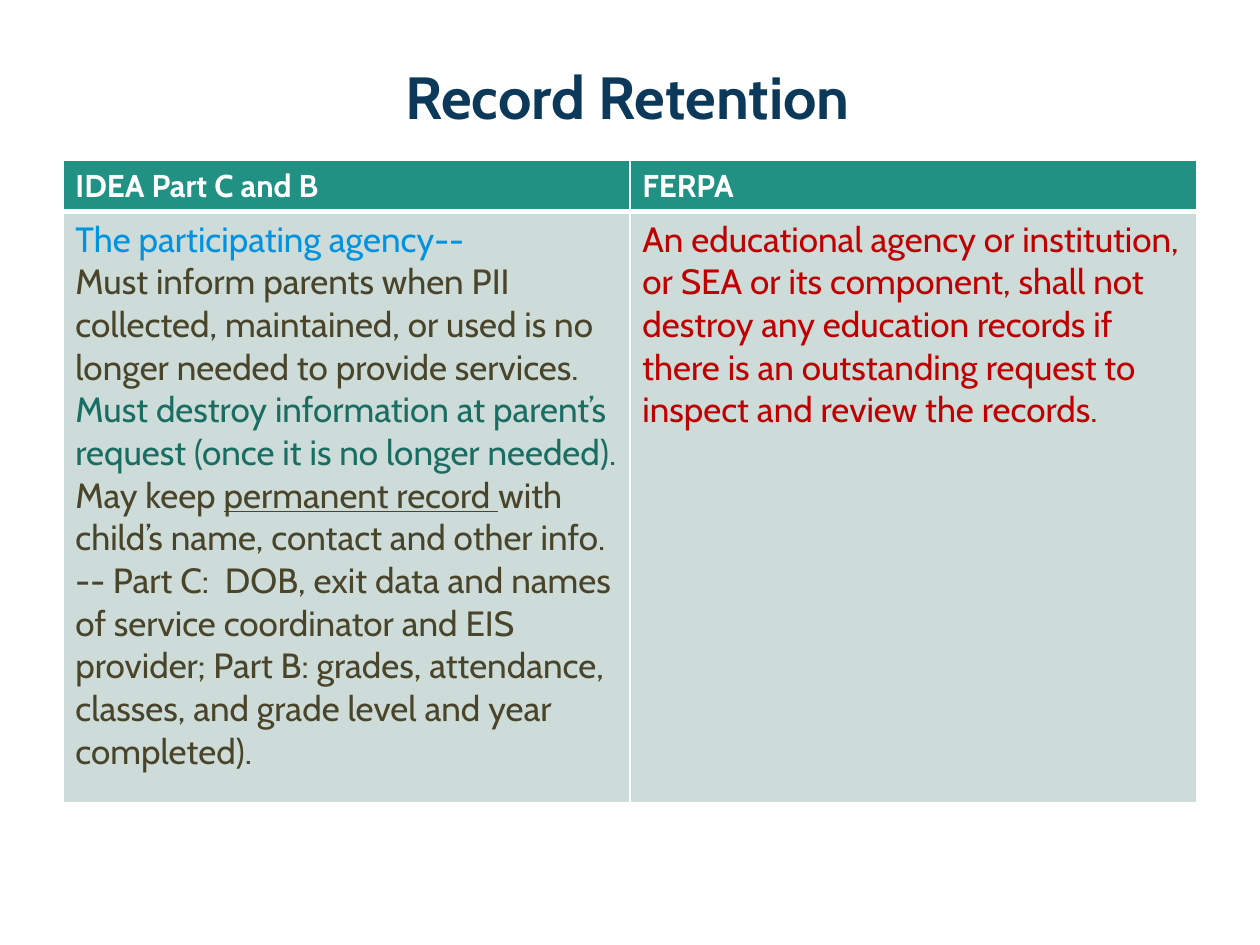
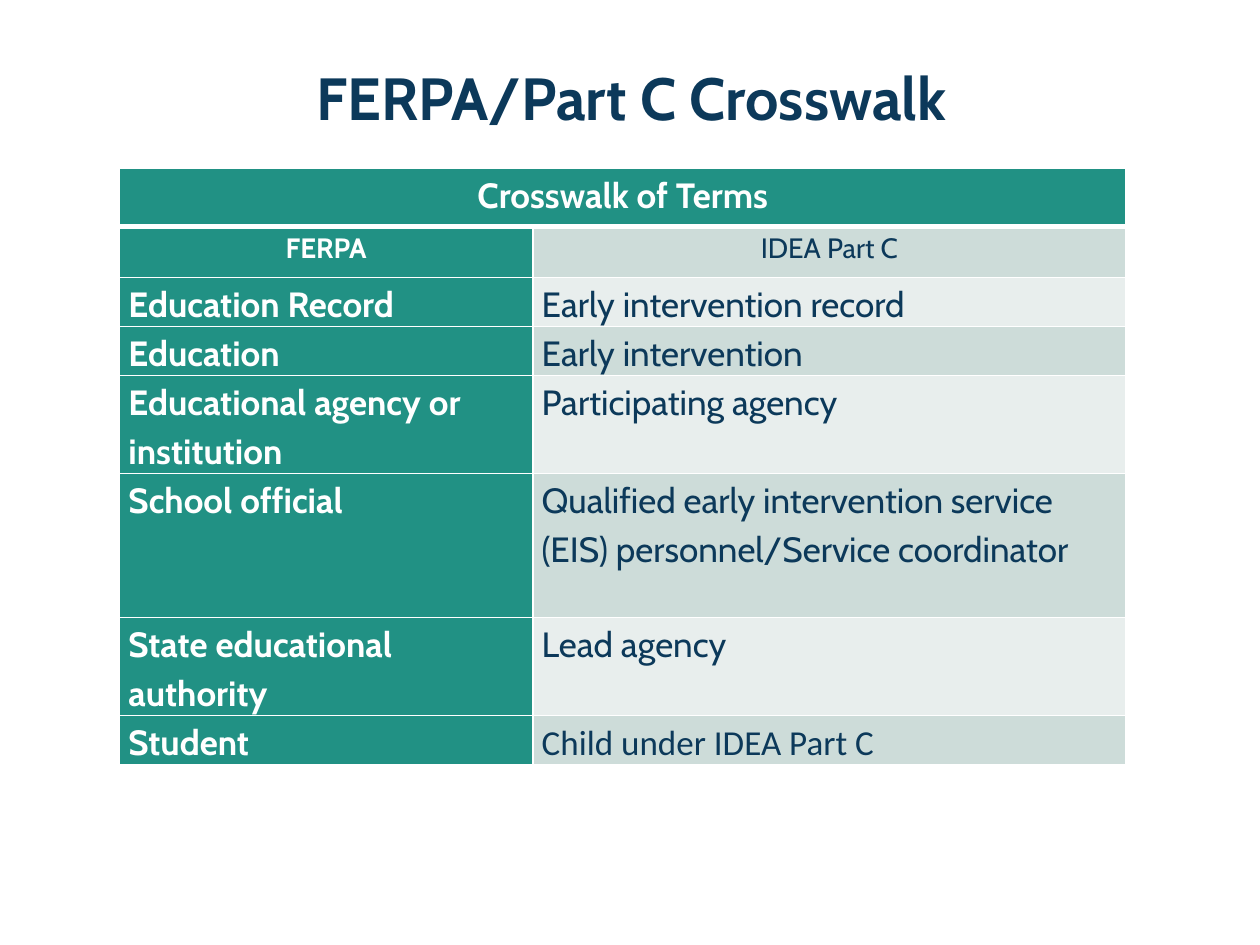
from dataclasses import dataclass

from lxml import etree
from pptx import Presentation
from pptx.dml.color import RGBColor
from pptx.enum.text import MSO_ANCHOR, MSO_AUTO_SIZE, PP_ALIGN
from pptx.oxml.ns import qn
from pptx.util import Cm, Pt

CENTER = PP_ALIGN.CENTER
LEFT = PP_ALIGN.LEFT
BOTTOM = MSO_ANCHOR.BOTTOM
TOP = MSO_ANCHOR.TOP
NO_FIT = MSO_AUTO_SIZE.NONE
TITLE_ONLY = 5


@dataclass(frozen=True)
class Theme:
    font: str = "Cabin"
    plain_font: str = "Calibri"
    navy: str = "0C395A"
    teal: str = "219184"
    deep_teal: str = "196D63"
    band: str = "CDDCD9"
    pale_band: str = "E8EEED"
    white: str = "FFFFFF"
    blue: str = "0293E0"
    olive: str = "4A452A"
    red: str = "C00000"
    title_size: int = 34
    body_size: int = 20
    heading_size: int = 18
    column_size: int = 16
    thin_line: int = 1
    thick_line: int = 3


THEME = Theme()


def write(para, text, *, size=THEME.body_size, color=THEME.navy,
          font=THEME.font, bold=False, underline=False):
    span = para.add_run()
    span.text = text
    span.font.name = font
    span.font.size = Pt(size)
    span.font.bold = bold
    span.font.underline = underline
    span.font.color.rgb = RGBColor.from_string(color)


class Builder:
    def __init__(self, theme):
        self.theme = theme
        self.deck = Presentation()
        self.deck.slide_width = Cm(25.4)
        self.deck.slide_height = Cm(19.05)
        self.page = None

    def start_page(self, title, left, top):
        self.page = self.deck.slides.add_slide(self.deck.slide_layouts[TITLE_ONLY])
        box = self.page.shapes.title
        box.left, box.top, box.width, box.height = Cm(left), Cm(top), Cm(22.86), Cm(3.1)
        frame = box.text_frame
        frame.auto_size = NO_FIT
        frame.word_wrap = True
        frame.vertical_anchor = BOTTOM
        para = frame.paragraphs[0]
        para.alignment = CENTER
        write(para, title, size=self.theme.title_size, bold=True)

    def table(self, left, top, widths, heights):
        table = self.page.shapes.add_table(
            len(heights), len(widths), Cm(left), Cm(top),
            Cm(sum(widths)), Cm(sum(heights))).table
        table.horz_banding = False
        for column, width in zip(table.columns, widths):
            column.width = Cm(width)
        for row, height in zip(table.rows, heights):
            row.height = Cm(height)
        return table

    def cell(self, table, row, column, paragraphs, fill, *, align=LEFT,
             side=0.25, edge=0.13, spacing=None, after=0):
        cell = table.cell(row, column)
        cell.margin_left = cell.margin_right = Cm(side)
        cell.margin_top = cell.margin_bottom = Cm(edge)
        cell.vertical_anchor = TOP
        cell.fill.solid()
        cell.fill.fore_color.rgb = RGBColor.from_string(fill)
        self.borders(cell, row)
        for index, spans in enumerate(paragraphs):
            frame = cell.text_frame
            para = frame.add_paragraph() if index else frame.paragraphs[0]
            para.alignment = align
            para.space_after = Pt(after)
            if spacing:
                para.line_spacing = spacing
            for text, style in spans:
                write(para, text, **style)

    def borders(self, cell, row):
        thin, thick = self.theme.thin_line, self.theme.thick_line
        weights = {"L": thin, "R": thin,
                   "T": thick if row == 1 else thin,
                   "B": thick if row == 0 else thin}
        properties = cell._tc.get_or_add_tcPr()
        for index, (side, weight) in enumerate(weights.items()):
            line = etree.Element(qn(f"a:ln{side}"), w=str(Pt(weight)))
            fill = etree.SubElement(line, qn("a:solidFill"))
            etree.SubElement(fill, qn("a:srgbClr"), val=self.theme.white)
            properties.insert(index, line)


def retention_page(builder):
    theme = builder.theme
    builder.start_page("Record Retention", 1.22, -0.33)
    table = builder.table(1.27, 3.23, [11.43, 11.43], [1.04, 11.91])
    heading = {"size": theme.heading_size, "color": theme.white, "bold": True}
    olive = {"color": theme.olive}
    agency_duties = [
        [("The participating agency--", {"color": theme.blue})],
        [("Must inform parents when PII collected, maintained, or used is no "
          "longer needed to provide services.", olive)],
        [("Must destroy information at parent’s request (once it is no longer "
          "needed).", {"color": theme.deep_teal})],
        [("May keep ", olive),
         ("permanent record ", {**olive, "underline": True}),
         ("with child’s name, contact and other info. -- Part C:  DOB, exit data "
          "and names of service coordinator and EIS provider; Part B: grades, "
          "attendance, classes, and grade level and year completed).", olive)],
    ]
    ferpa_duties = [
        [("An educational agency or institution, or SEA or its component, shall "
          "not destroy any education records if there is an outstanding request "
          "to inspect and review the records.", {"color": theme.red})],
    ]
    columns = [("IDEA Part C and B", agency_duties), ("FERPA", ferpa_duties)]
    for column, (name, duties) in enumerate(columns):
        builder.cell(table, 0, column, [[(name, heading)]], theme.teal)
        builder.cell(table, 1, column, duties, theme.band)


def crosswalk_page(builder):
    theme = builder.theme
    builder.start_page("FERPA/Part C Crosswalk", 1.3, -0.3)
    terms = [
        ("FERPA", "IDEA Part C", 1.02),
        ("Education Record", "Early intervention record", 0.97),
        ("Education", "Early intervention", 0.97),
        ("Educational agency or institution", "Participating agency", 1.96),
        ("School official", "Qualified early intervention service (EIS) "
         "personnel/Service coordinator", 2.9),
        ("State educational authority", "Lead agency", 1.96),
        ("Student", "Child under IDEA Part C", 0.97),
    ]
    heights = [1.17] + [height for _, _, height in terms]
    table = builder.table(2.41, 3.4, [8.33, 11.96], heights)
    table.cell(0, 0).merge(table.cell(0, 1))
    layout = {"side": 0.18, "edge": 0, "spacing": 1.15, "after": 10}
    strong = {"color": theme.white, "bold": True}
    builder.cell(table, 0, 0, [[("Crosswalk of Terms", strong)]], theme.teal,
                 align=CENTER, **layout)
    for row, (ferpa, part_c, _) in enumerate(terms, 1):
        is_heading = row == 1
        size = theme.column_size if is_heading else theme.body_size
        align = CENTER if is_heading else LEFT
        font = theme.plain_font if row == len(terms) else theme.font
        band = theme.band if row % 2 else theme.pale_band
        builder.cell(table, row, 0, [[(ferpa, {**strong, "size": size})]],
                     theme.teal, align=align, **layout)
        builder.cell(table, row, 1, [[(part_c, {"size": size, "font": font})]],
                     band, align=align, **layout)


def main():
    builder = Builder(THEME)
    retention_page(builder)
    crosswalk_page(builder)
    builder.deck.save("out.pptx")


if __name__ == "__main__":
    main()
